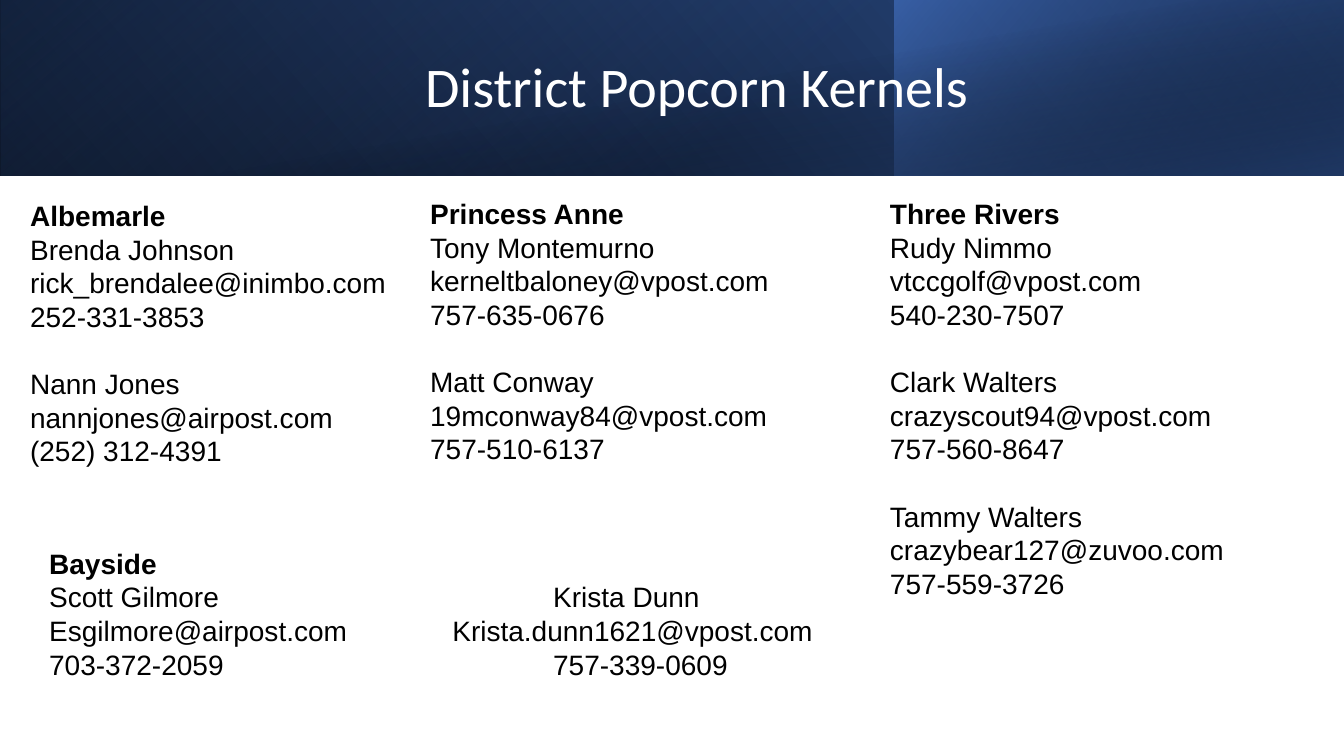
from lxml import etree
from pptx import Presentation
from pptx.dml.color import RGBColor
from pptx.enum.shapes import MSO_SHAPE
from pptx.enum.text import MSO_ANCHOR, PP_ALIGN
from pptx.oxml.ns import qn
from pptx.util import Pt

RECTANGLE = MSO_SHAPE.RECTANGLE
MIDDLE = MSO_ANCHOR.MIDDLE
CENTER = PP_ALIGN.CENTER

BLACK = RGBColor(0x00, 0x00, 0x00)
WHITE = RGBColor(0xFF, 0xFF, 0xFF)
NAVY = RGBColor(0x1F, 0x38, 0x64)
ROYAL = RGBColor(0x2F, 0x54, 0x96)
BLUE = RGBColor(0x44, 0x72, 0xC4)

SLIDE_WIDTH, SLIDE_HEIGHT = 960, 540
BANNER_HEIGHT = 125.5
SPLIT = 639
LINE_PITCH = 24

DISTRICTS = [
    ((14.4, 138.2, 303, 242), "Albemarle", [
        ["Brenda Johnson", "rick_brendalee@inimbo.com", "252-331-3853"],
        ["Nann Jones", "nannjones@airpost.com", "(252) 312-4391"],
    ]),
    ((300.2, 136.8, 285, 218), "Princess Anne", [
        ["Tony Montemurno", "kerneltbaloney@vpost.com", "757-635-0676"],
        ["Matt Conway", "19mconway84@vpost.com", "757-510-6137"],
    ]),
    ((628.6, 136.8, 303, 298), "Three Rivers", [
        ["Rudy Nimmo", "vtccgolf@vpost.com", "540-230-7507"],
        ["Clark Walters", "crazyscout94@vpost.com", "757-560-8647"],
        ["Tammy Walters", "crazybear127@zuvoo.com", "757-559-3726"],
    ]),
]
BAYSIDE_PAIRS = [
    ("Scott Gilmore", "Krista Dunn", 360),
    ("Esgilmore@airpost.com", "Krista.dunn1621@vpost.com", 288),
    ("703-372-2059", "757-339-0609", 360),
]


def add_gradient(slide, box, stops, angle, flipped=True, rotation=0):
    panel = slide.shapes.add_shape(RECTANGLE, *map(Pt, box))
    panel.shadow.inherit = False
    panel.line.fill.background()
    panel.rotation = rotation
    if flipped:
        panel._element.spPr.find(qn("a:xfrm")).set("flipH", "1")
    panel.fill.gradient()
    panel.fill.gradient_angle = angle
    stop_list = panel._element.spPr.find(qn("a:gradFill")).find(qn("a:gsLst"))
    for default_stop in list(stop_list):
        stop_list.remove(default_stop)
    for position, color, opacity in stops:
        stop = etree.SubElement(stop_list, qn("a:gs"), pos=str(position * 1000))
        tint = etree.SubElement(stop, qn("a:srgbClr"), val=str(color))
        if opacity < 100:
            etree.SubElement(tint, qn("a:alpha"), val=str(opacity * 1000))


def add_text_frame(slide, box):
    frame = slide.shapes.add_textbox(*map(Pt, box)).text_frame
    frame.word_wrap = True
    return frame


def add_run(paragraph, text, size, face, color, bold=False):
    run = paragraph.add_run()
    run.text = text
    run.font.size = Pt(size)
    run.font.name = face
    run.font.color.rgb = color
    run.font.bold = bold


def add_banner(slide, box):
    left, top, width, height = box
    add_gradient(slide, box, [(0, BLACK, 100), (100, ROYAL, 100)], 140)
    add_gradient(slide, (left, top, SPLIT, height),
                 [(0, BLUE, 0), (20, BLUE, 0), (100, NAVY, 55)], 230, rotation=180)
    add_gradient(slide, (left + SPLIT, top, width - SPLIT, height),
                 [(0, BLUE, 66), (100, BLACK, 30)], 220)
    add_gradient(slide, (left + 36, top, width - 36, height),
                 [(0, BLACK, 0), (50, BLACK, 0), (99, NAVY, 52), (100, NAVY, 52)],
                 280, flipped=False)
    frame = add_text_frame(slide, (left + 108, top + 23, 779, 81.4))
    frame.vertical_anchor = MIDDLE
    title = frame.paragraphs[0]
    title.alignment = CENTER
    title.line_spacing = 0.9
    add_run(title, "District Popcorn Kernels", 40, "Calibri", WHITE)


def add_line(frame, text, bold=False):
    paragraph = frame.paragraphs[0] if bold else frame.add_paragraph()
    paragraph.line_spacing = Pt(LINE_PITCH)
    add_run(paragraph, text, 20, "Arial", BLACK, bold)
    return paragraph


def add_district(slide, box, district, kernels):
    frame = add_text_frame(slide, box)
    add_line(frame, district, bold=True)
    for index, kernel in enumerate(kernels):
        for row, detail in enumerate(kernel):
            line = add_line(frame, detail)
            if index and row == 0:
                line.space_before = Pt(LINE_PITCH)


def add_bayside(slide, box):
    frame = add_text_frame(slide, box)
    add_line(frame, "Bayside", bold=True)
    for first, second, tab_position in BAYSIDE_PAIRS:
        line = add_line(frame, f"{first}\t{second}")
        tabs = etree.SubElement(line._p.get_or_add_pPr(), qn("a:tabLst"))
        etree.SubElement(tabs, qn("a:tab"), pos=str(Pt(tab_position)), algn="l")


def main():
    deck = Presentation()
    deck.slide_width, deck.slide_height = Pt(SLIDE_WIDTH), Pt(SLIDE_HEIGHT)
    slide = deck.slides.add_slide(deck.slide_layouts[6])
    add_banner(slide, (0, 0, SLIDE_WIDTH, BANNER_HEIGHT))
    for box, district, kernels in DISTRICTS:
        add_district(slide, box, district, kernels)
    add_bayside(slide, (28, 386.6, 614, 126))
    deck.save("out.pptx")


if __name__ == "__main__":
    main()
